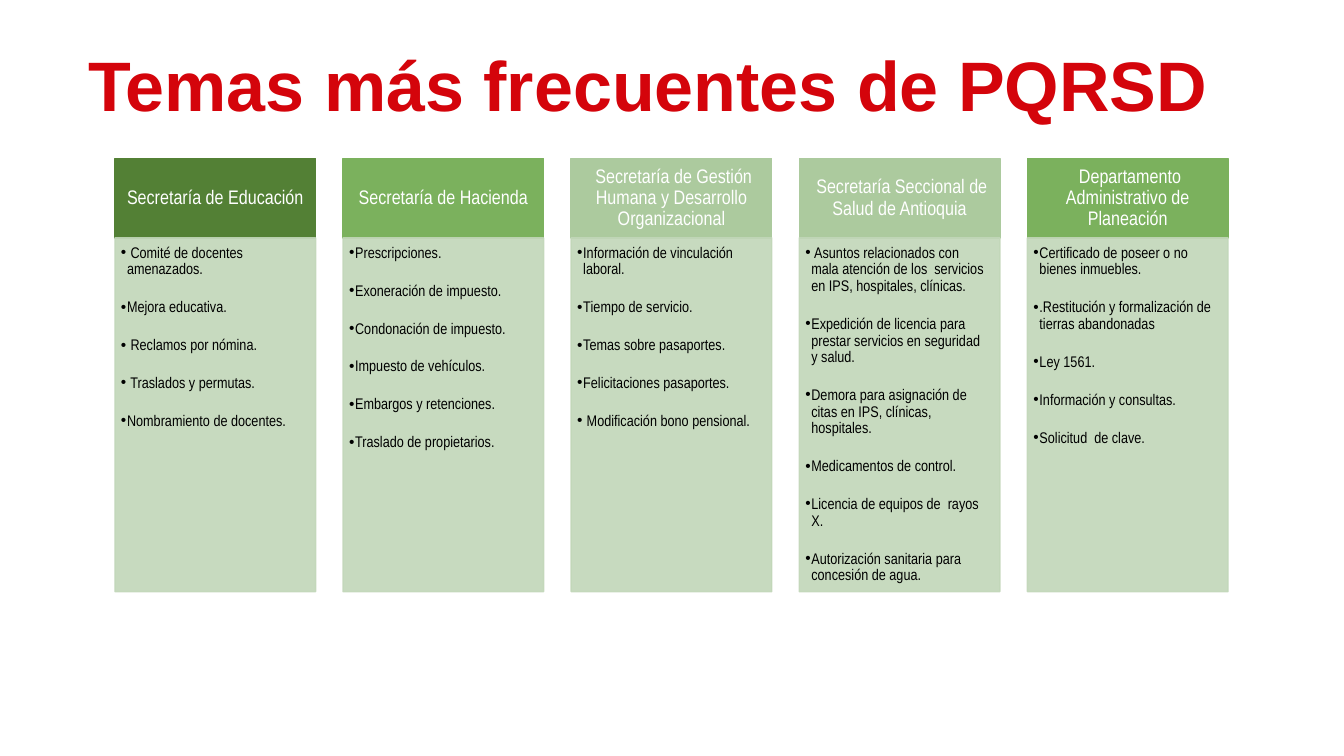
from lxml import etree
from pptx import Presentation
from pptx.dml.color import RGBColor
from pptx.enum.shapes import MSO_SHAPE as Shape
from pptx.enum.text import MSO_ANCHOR as Anchor, PP_ALIGN as Align
from pptx.oxml.ns import qn
from pptx.util import Inches, Pt

TOPICS = [
    ("Secretaría de Educación", "538035", [
        " Comité de docentes amenazados.",
        "Mejora educativa.",
        " Reclamos por nómina.",
        " Traslados y permutas.",
        "Nombramiento de docentes.",
    ]),
    ("Secretaría de Hacienda", "7BB15D", [
        "Prescripciones.",
        "Exoneración de impuesto.",
        "Condonación de impuesto.",
        "Impuesto de vehículos.",
        "Embargos y retenciones.",
        "Traslado de propietarios.",
    ]),
    (" Secretaría de Gestión Humana y Desarrollo Organizacional", "ACCA9E", [
        "Información de vinculación laboral.",
        "Tiempo de servicio.",
        "Temas sobre pasaportes.",
        "Felicitaciones pasaportes.",
        " Modificación bono pensional.",
    ]),
    (" Secretaría Seccional de Salud de Antioquia", "ACCA9E", [
        " Asuntos relacionados con mala atención de los  servicios en IPS, "
        "hospitales, clínicas.",
        "Expedición de licencia para prestar servicios en seguridad y salud.",
        "Demora para asignación de citas en IPS, clínicas, hospitales.",
        "Medicamentos de control.",
        "Licencia de equipos de  rayos X.",
        "Autorización sanitaria para concesión de agua.",
    ]),
    (" Departamento Administrativo de Planeación", "7BB15D", [
        "Certificado de poseer o no bienes inmuebles.",
        ".Restitución y formalización de  tierras abandonadas",
        "Ley 1561.",
        "Información y consultas.",
        "Solicitud  de clave.",
    ]),
]
LEFT, TOP, WIDTH, SPAN = 1.14, 1.57, 1.99, 9.05
HEAD, BODY = 0.79, 3.51


def color(code):
    return RGBColor.from_string(code)


def style(par, font, size, code, align, bold=False):
    par.alignment = align
    par.line_spacing = 0.9
    for run in par.runs:
        run.font.name = font
        run.font.size = Pt(size)
        run.font.bold = bold
        run.font.color.rgb = color(code)


def add_title(slide, text):
    title = slide.shapes.title
    title.left, title.top = Inches(0.68), Inches(0.34)
    title.width, title.height = Inches(11.5), Inches(1.08)
    frame = title.text_frame
    frame.text = text
    frame.vertical_anchor = Anchor.MIDDLE
    style(frame.paragraphs[0], "Arial", 50, "D4040B", Align.CENTER, True)


def add_box(slide, left, top, height, code, inset, anchor):
    box = slide.shapes.add_shape(
        Shape.RECTANGLE, Inches(left), Inches(top), Inches(WIDTH), Inches(height))
    box.shadow.inherit = False
    box.fill.solid()
    box.fill.fore_color.rgb = color(code)
    box.line.color.rgb = color(code)
    box.line.width = Pt(1)
    frame = box.text_frame
    frame.word_wrap = True
    frame.vertical_anchor = anchor
    frame.margin_left, frame.margin_top, frame.margin_right, frame.margin_bottom = (
        Inches(side) for side in inset)
    return box


def fade(box, percent):
    for tone in box._element.spPr.iter(qn("a:srgbClr")):
        etree.SubElement(tone, qn("a:alpha"), val=str(percent * 1000))


def add_bullet(par):
    props = par._p.get_or_add_pPr()
    props.set("marL", str(Inches(0.06)))
    props.set("indent", str(-Inches(0.06)))
    etree.SubElement(props, qn("a:buFont"), typeface="Arial")
    etree.SubElement(props, qn("a:buChar"), char="•")


def add_head(slide, left, text, code):
    box = add_box(slide, left, TOP, HEAD, code,
                  (0.11, 0.06, 0.11, 0.06), Anchor.MIDDLE)
    box.text_frame.text = text
    style(box.text_frame.paragraphs[0], "Arial Narrow", 14, "FFFFFF", Align.CENTER)


def add_list(slide, left, items):
    box = add_box(slide, left, TOP + HEAD, BODY, "C2D7B9",
                  (0.06, 0.07, 0.13, 0.1), Anchor.TOP)
    fade(box, 90)
    frame = box.text_frame
    frame.text = "\n".join(items)
    for index, par in enumerate(frame.paragraphs):
        add_bullet(par)
        style(par, "Arial Narrow", 11, "000000", Align.LEFT)
        if index:
            par.space_before = Pt(15.2)


def main():
    deck = Presentation()
    deck.slide_width, deck.slide_height = Inches(13.33), Inches(7.5)
    slide = deck.slides.add_slide(deck.slide_layouts[5])
    add_title(slide, "Temas más frecuentes de PQRSD")
    step = SPAN / (len(TOPICS) - 1)
    for index, (name, code, items) in enumerate(TOPICS):
        left = LEFT + index * step
        add_head(slide, left, name, code)
        add_list(slide, left, items)
    deck.save("out.pptx")


if __name__ == "__main__":
    main()
